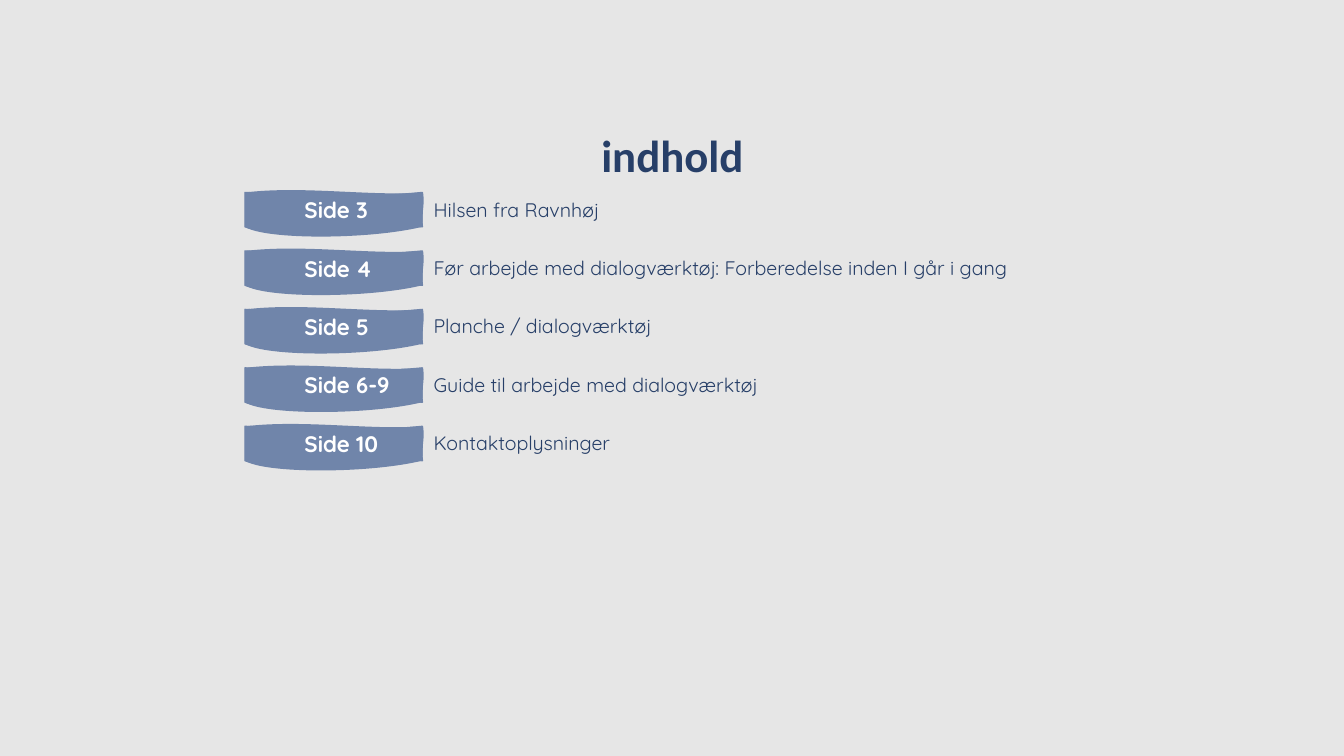
from lxml import etree
from pptx import Presentation
from pptx import util as u
from pptx.dml.color import RGBColor
from pptx.enum import text
from pptx.oxml.ns import qn

# Content: page label, entry, height of the entry box
TITLE = "indhold"
ROWS = [
    ("Side 3", "Hilsen fra Ravnhøj", 0.34),
    ("Side 4", "Før arbejde med dialogværktøj: Forberedelse inden I går i gang", 0.34),
    ("Side 5", "Planche / dialogværktøj", 0.57),
    ("Side 6-9", "Guide til arbejde med dialogværktøj", 0.34),
    ("Side 10", "Kontaktoplysninger", 0.34),
]

# Wavy flag curves in hundredths of an inch, clockwise from the top left
EDGE = [
    [(77, 4), (114, 6), (176, 0)],
    [(178, 15), (174, 18), (176, 34)],
    [(108, 29), (41, 48), (0, 34)],
    [(0, 24), (0, 14), (0, 0)],
]
BODY = [
    [(57, -7), (125, 4), (176, 0)],
    [(177, 15), (176, 29), (176, 34)],
    [(123, 47), (19, 47), (0, 34)],
    [(0, 22), (0, 12), (0, 0)],
]

GREY = RGBColor(0xE6, 0xE6, 0xE6)
NAVY = RGBColor(0x27, 0x3F, 0x68)
BLUE = RGBColor(0x70, 0x85, 0xAA)
WHITE = RGBColor(0xFF, 0xFF, 0xFF)

# Layout in inches
TOP, STEP = 1.91, 0.58
FLAG_X, FLAG_W, FLAG_H = 2.43, 1.76, 0.34
TEXT_X, TEXT_W = 3.71, 7.1


def write(shape, words, font, size, color, bold, pads, anchor, align):
    frame = shape.text_frame
    frame.word_wrap = True
    frame.auto_size = text.MSO_AUTO_SIZE.NONE
    frame.vertical_anchor = anchor
    left, top, right, low = map(u.Inches, pads)
    frame.margin_left, frame.margin_top = left, top
    frame.margin_right, frame.margin_bottom = right, low
    para = frame.paragraphs[0]
    para.alignment = align
    run = para.add_run()
    run.text = words
    run.font.name, run.font.size = font, u.Pt(size)
    run.font.bold, run.font.color.rgb = bold, color


def add_curve(paths, curves, **flags):
    size = {"w": str(round(FLAG_W * 100)), "h": str(round(FLAG_H * 100))}
    node = etree.SubElement(paths, qn("a:path"), {**size, **flags})
    start = etree.SubElement(node, qn("a:moveTo"))
    etree.SubElement(start, qn("a:pt"), x="0", y="0")
    for curve in curves:
        bend = etree.SubElement(node, qn("a:cubicBezTo"))
        for x, y in curve:
            etree.SubElement(bend, qn("a:pt"), x=str(x), y=str(y))
    etree.SubElement(node, qn("a:close"))


def add_flag(slide, y):
    # Straight box first, then its sides become curves
    pen = slide.shapes.build_freeform(0, 0, scale=u.Inches(0.01))
    pen.add_line_segments([(curve[-1]) for curve in EDGE])
    flag = pen.convert_to_shape(u.Inches(FLAG_X), u.Inches(y))
    paths = flag._element.spPr.find(".//" + qn("a:pathLst"))
    for old in list(paths):
        paths.remove(old)
    add_curve(paths, EDGE, fill="none")
    add_curve(paths, BODY, stroke="0")
    flag.shadow.inherit = False
    flag.fill.solid()
    flag.fill.fore_color.rgb = BLUE
    flag.line.color.rgb = BLUE
    flag.line.width = u.Pt(1)
    return flag


def main():
    deck = Presentation()
    deck.slide_width, deck.slide_height = u.Inches(13.33), u.Inches(7.5)
    slide = deck.slides.add_slide(deck.slide_layouts[5])
    slide.background.fill.solid()
    slide.background.fill.fore_color.rgb = GREY
    high, mid = text.MSO_ANCHOR.TOP, text.MSO_ANCHOR.MIDDLE
    left = text.PP_ALIGN.LEFT

    # Title
    head = slide.shapes.title
    head.left, head.top = u.Inches(3.21), u.Inches(1.22)
    head.width, head.height = u.Inches(6.92), u.Inches(0.64)
    write(head, TITLE, "Calibri", 32, NAVY, True,
          (0.1, 0.05, 0.1, 0.05), high, text.PP_ALIGN.CENTER)

    # Rows: flag with page label, entry beside it
    for i, (page, entry, tall) in enumerate(ROWS):
        y = TOP + i * STEP
        write(add_flag(slide, y), page, "Quicksand", 16, WHITE, True,
              (0.59, 0.04, 0.08, 0.04), mid, left)
        box = slide.shapes.add_textbox(
            u.Inches(TEXT_X), u.Inches(y), u.Inches(TEXT_W), u.Inches(tall))
        write(box, entry, "Quicksand", 14, NAVY, False,
              (0.59, 0.05, 0.1, 0.05), high, left)

    deck.save("out.pptx")


if __name__ == "__main__":
    main()
